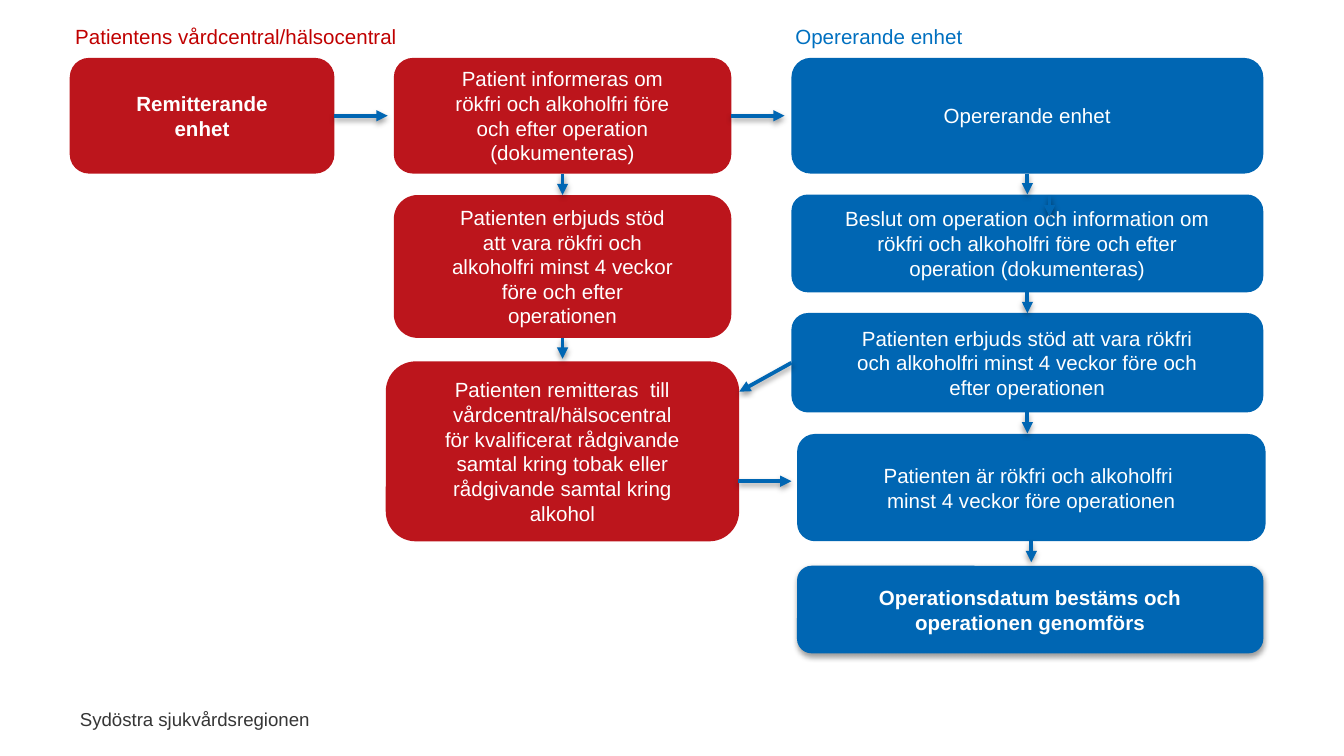
from lxml import etree
from pptx import Presentation
from pptx.dml.color import RGBColor
from pptx.enum.shapes import MSO_CONNECTOR, MSO_SHAPE
from pptx.enum.text import MSO_ANCHOR, PP_ALIGN
from pptx.oxml import parse_xml
from pptx.oxml.ns import nsdecls, qn
from pptx.util import Pt

ROUND = MSO_SHAPE.ROUNDED_RECTANGLE
LINE = MSO_CONNECTOR.STRAIGHT
LEFT, MID, RIGHT = PP_ALIGN.LEFT, PP_ALIGN.CENTER, PP_ALIGN.RIGHT
TOP, CENTER = MSO_ANCHOR.TOP, MSO_ANCHOR.MIDDLE

INK = {"red": "BC151C", "blue": "0066B3", "white": "FFFFFF",
       "care": "C00000", "unit": "0070C0", "gray": "363636"}

LABELS = [
    ("Patientens vårdcentral/hälsocentral", (33.2, 9.4, 229, 33.8), "care"),
    ("Opererande enhet", (419, 9.4, 128.2, 33.8), "unit"),
]
FOOT = ("Sydöstra sjukvårdsregionen", (34.6, 375.8, 138.2, 19.4))

COLS = {"refer": (37.4, 141.8), "care": (211, 180.8), "wide": (206.7, 189.3),
        "unit": (424, 252.8), "late": (427, 251), "last": (427, 249.8)}

BOXES = [
    ("refer", "Remitterande enhet", "refer", 31, 62, "red"),
    ("inform", "Patient informeras om rökfri och alkoholfri före och efter "
     "operation (dokumenteras)", "care", 31, 62, "red"),
    ("offer", "Patienten erbjuds stöd att vara rökfri och alkoholfri minst "
     "4 veckor före och efter operationen", "care", 104.5, 76.5, "red"),
    ("advise", "Patienten remitteras  till vårdcentral/hälsocentral för "
     "kvalificerat rådgivande samtal kring tobak eller rådgivande samtal "
     "kring alkohol", "wide", 193.6, 96.4, "red"),
    ("unit", "Opererande enhet", "unit", 31, 62, "blue"),
    ("decide", "Beslut om operation och information om rökfri och alkoholfri "
     "före och efter operation (dokumenteras)", "unit", 104.2, 52.4, "blue"),
    ("help", "Patienten erbjuds stöd att vara rökfri och alkoholfri minst "
     "4 veckor före och efter operationen", "unit", 167.7, 53.3, "blue"),
    ("ready", "Patienten är rökfri och alkoholfri \vminst 4 veckor före "
     "operationen", "late", 232.5, 57.5, "blue"),
    ("date", "Operationsdatum bestäms och operationen genomförs",
     "last", 303.1, 46.9, "blue"),
]
STRONG = {"refer", "date"}
RAISED = {"date"}

JOINS = [("unit", "decide"), ("decide", "help"), ("inform", "offer")]
STUBS = [("refer", 3, 28.5, 0), ("inform", 3, 28.5, 0), ("offer", 2, 0, 11.2),
         ("help", 2, 0, 11.2), ("ready", 2, 0, 11.2), ("help", 1, -28, 15.5)]
FREE = [((395.5, 257.8), (424, 257.8)), ((562.3, 105.1), (562.3, 116))]

prs = Presentation()
prs.slide_width, prs.slide_height = Pt(720), Pt(405)
slide = prs.slides.add_slide(prs.slide_layouts[6])
shapes = slide.shapes


def color(name):
    return RGBColor.from_string(INK[name])


def write(shape, text, ink="white", size=11, bold=False, align=LEFT,
          anchor=TOP, wrap=True, side=7.2):
    frame = shape.text_frame
    frame.word_wrap, frame.vertical_anchor = wrap, anchor
    frame.margin_left = frame.margin_right = Pt(side)
    para = frame.paragraphs[0]
    para.text, para.alignment = text, align
    for run in para.runs:
        font = run.font
        font.name, font.size, font.bold = "Arial", Pt(size), bold
        font.color.rgb = color(ink)


def shade(props):
    for old in props.findall(qn("a:effectLst")):
        props.remove(old)
    props.append(parse_xml(
        f'<a:effectLst {nsdecls("a")}><a:outerShdw blurRad="{Pt(3.1)}" '
        f'dist="{Pt(1.6)}" dir="5400000" rotWithShape="0">'
        '<a:srgbClr val="000000"><a:alpha val="38000"/></a:srgbClr>'
        '</a:outerShdw></a:effectLst>'))


def arrow(start, end):
    link = shapes.add_connector(LINE, *map(Pt, start + end))
    link.line.color.rgb, link.line.width = color("blue"), Pt(2)
    etree.SubElement(link.line._get_or_add_ln(), qn("a:tailEnd"),
                     type="triangle")
    shade(link._element.spPr)
    return link


def site(box, side):
    x, y, w, h = box.left.pt, box.top.pt, box.width.pt, box.height.pt
    return [(x + w / 2, y), (x, y + h / 2),
            (x + w / 2, y + h), (x + w, y + h / 2)][side]


text, place = FOOT
write(shapes.add_textbox(*map(Pt, place)), text, ink="gray", size=10,
      align=RIGHT, wrap=False)
for text, place, ink in LABELS:
    write(shapes.add_textbox(*map(Pt, place)), text, ink=ink)

nodes = {}
for key, text, col, top, high, fill in BOXES:
    left, wide = COLS[col]
    box = shapes.add_shape(ROUND, *map(Pt, (left, top, wide, high)))
    box.shadow.inherit = False
    box.fill.solid()
    box.fill.fore_color.rgb = color(fill)
    box.line.fill.background()
    if key in RAISED:
        shade(box._element.spPr)
    write(box, text, bold=key in STRONG, align=MID, anchor=CENTER, side=26)
    nodes[key] = box

for head, tail in JOINS:
    link = arrow(site(nodes[head], 2), site(nodes[tail], 0))
    link.begin_connect(nodes[head], 2)
    link.end_connect(nodes[tail], 0)
for key, side, dx, dy in STUBS:
    x, y = site(nodes[key], side)
    arrow((x, y), (x + dx, y + dy)).begin_connect(nodes[key], side)
for start, end in FREE:
    arrow(start, end)

prs.save("out.pptx")
